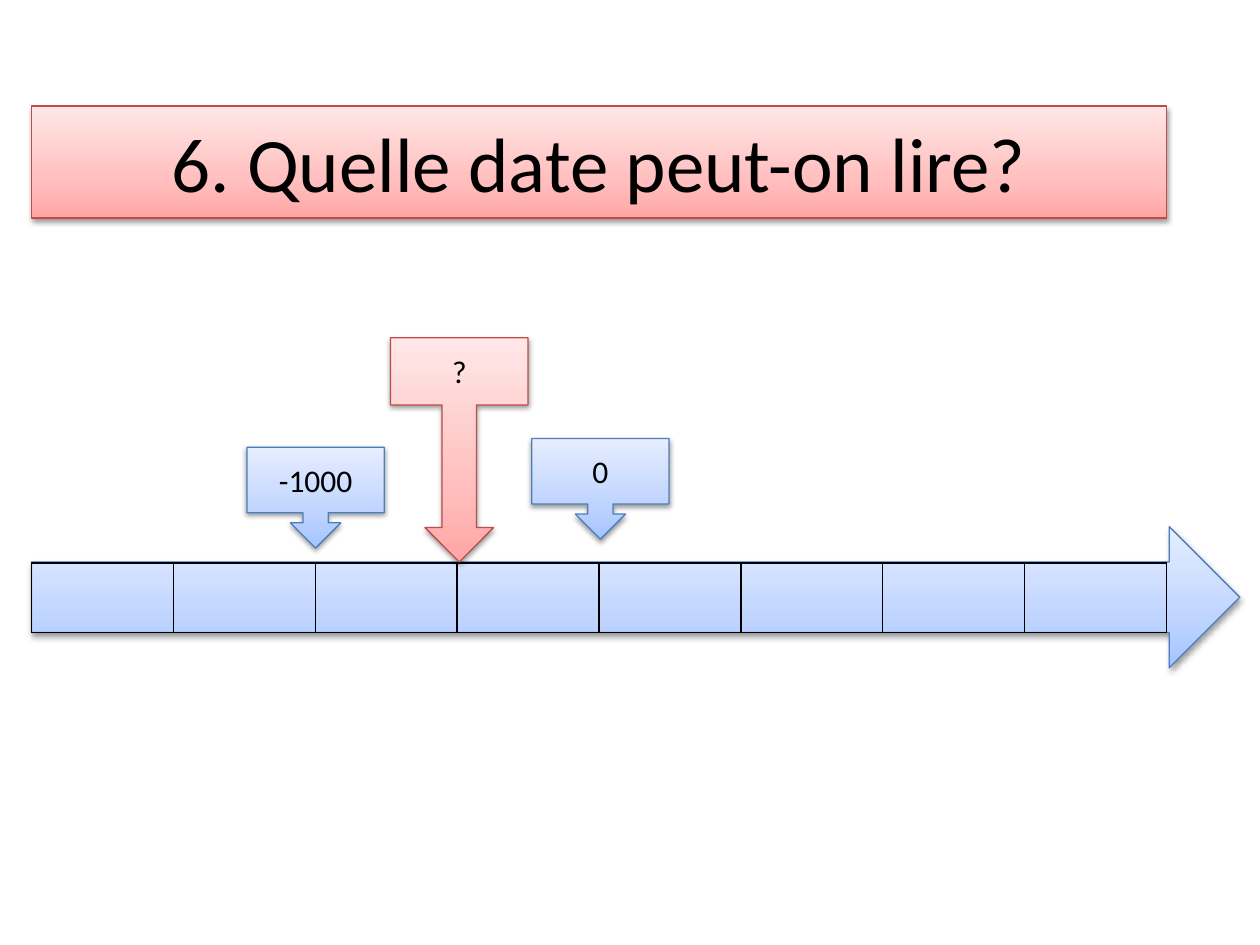
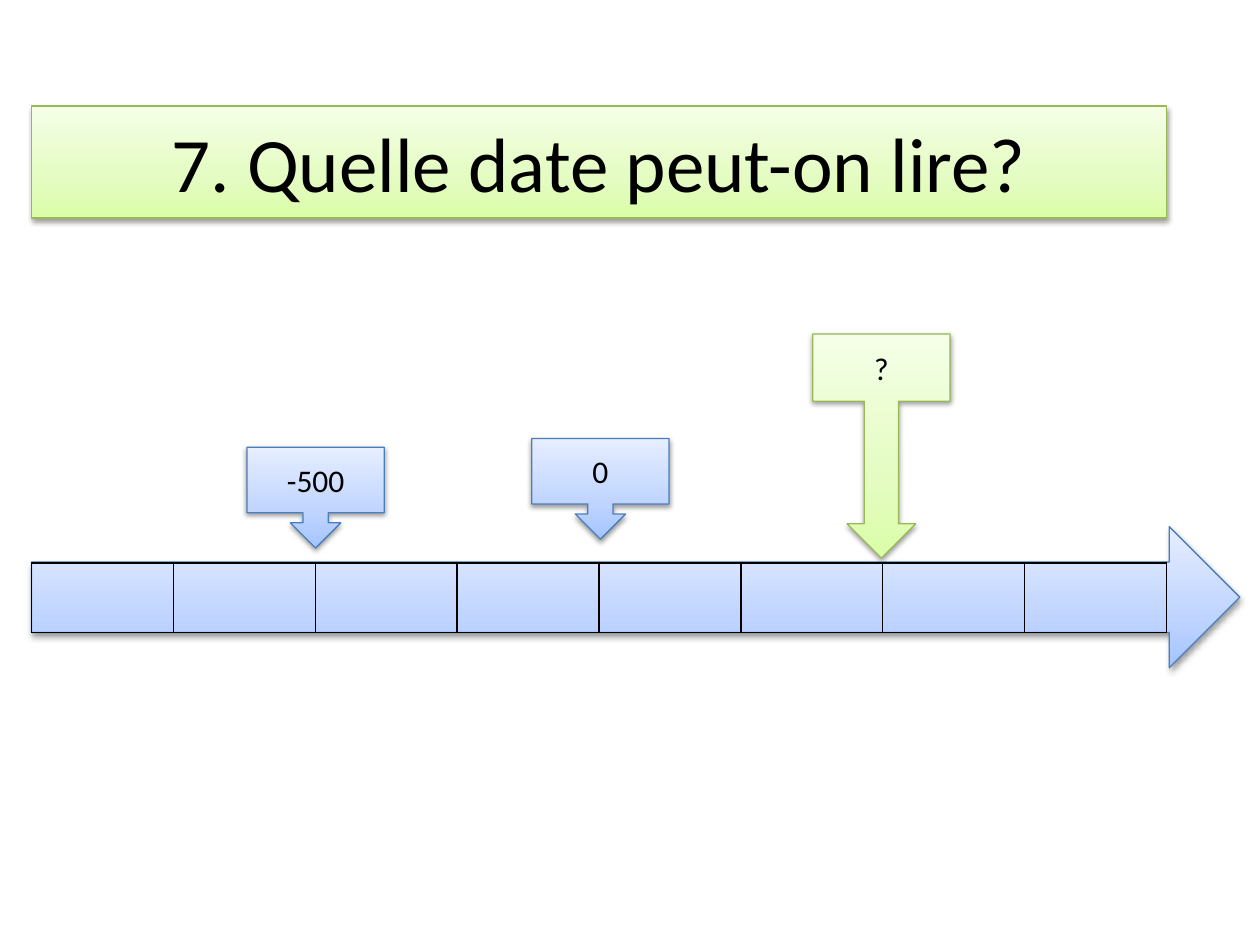
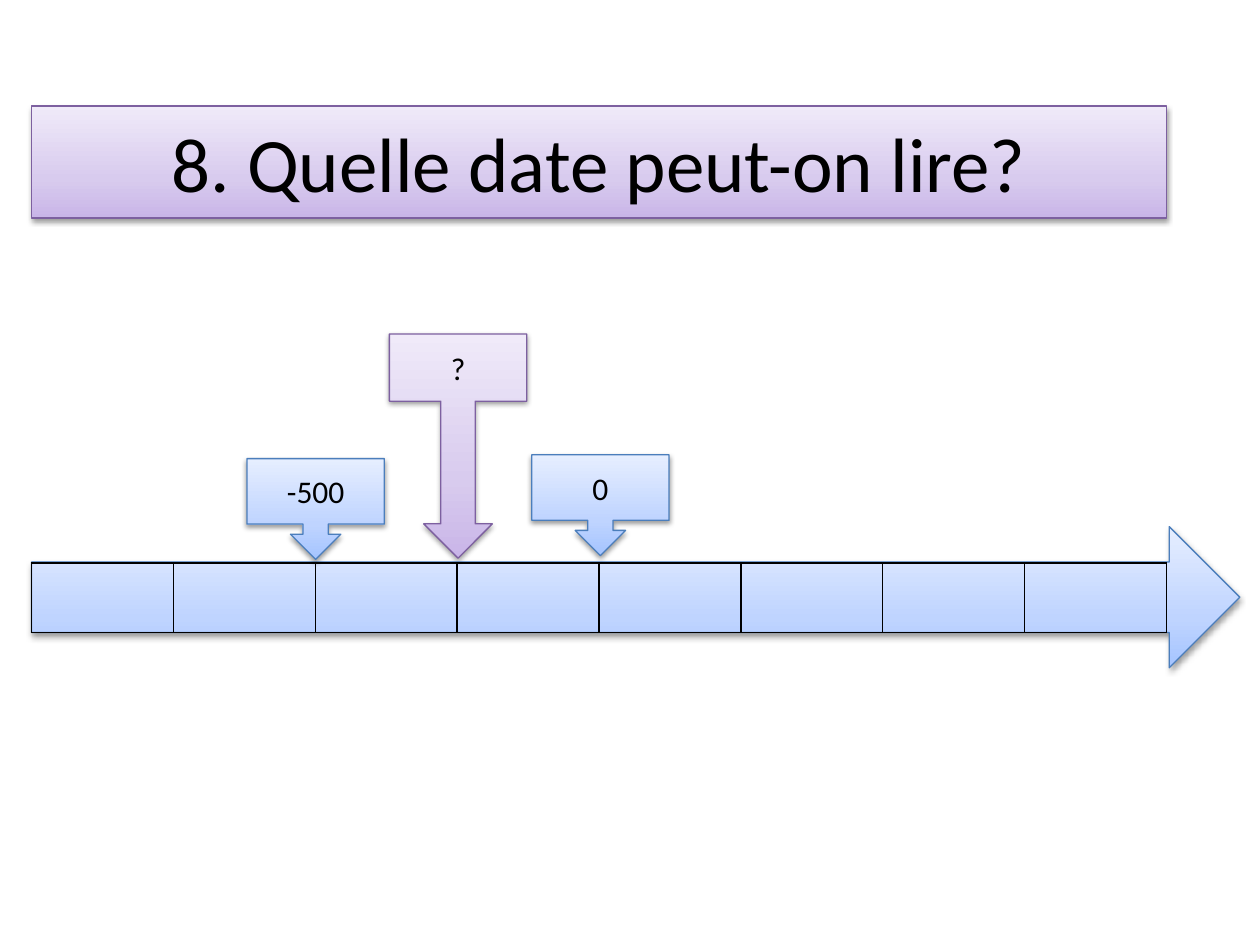
from lxml.etree import SubElement
from pptx import Presentation
from pptx.dml.color import RGBColor
from pptx.enum.shapes import MSO_SHAPE
from pptx.enum.text import MSO_ANCHOR, PP_ALIGN
from pptx.oxml.ns import qn
from pptx.util import Pt

SCALE = 9144
BLACK = "000000"
BLUE = ("A4C4FF", "BFD4FF", "E6EEFF", "4B7EBC")
RED = ("FFA6A5", "FFC0BF", "FFE7E7", "BF4C48")
GREEN = ("DAFDA7", "E4FCC2", "F5FFE7", "98B955")
PURPLE = ("C9B5E8", "D8CBEE", "F0EAF9", "7D60A0")
LEFT, WIDE, CELLS = 25, 901, 8

SLIDES = [
    (6, RED, "-1000", 355, 348, 310, 268),
    (7, GREEN, "-500", 355, 348, 645, 265),
    (8, PURPLE, "-500", 364, 361, 309, 265),
]


def px(size):
    return round(size * SCALE)


def color(code):
    return RGBColor.from_string(code)


def node(parent, tag, **attrs):
    return SubElement(parent, qn(tag), {key: str(val) for key, val in attrs.items()})


class Deck:
    font = "Calibri"
    stops = (0, 35, 100)

    def __init__(self):
        self.prs = Presentation()
        self.prs.slide_width = px(1000)
        self.prs.slide_height = px(750)

    def page(self):
        self.slide = self.prs.slides.add_slide(self.prs.slide_layouts[6])

    def shape(self, kind, box, theme):
        item = self.slide.shapes.add_shape(kind, *map(px, box))
        *tones, edge = theme
        item.fill.gradient()
        item.fill.gradient_angle = 90
        item.line.color.rgb = color(edge)
        item.line.width = Pt(0.75)
        item.shadow.inherit = False
        props = item.element.spPr
        marks = props.find(".//" + qn("a:gsLst"))
        for old in list(marks):
            marks.remove(old)
        for pos, tone in zip(self.stops, tones):
            node(node(marks, "a:gs", pos=pos * 1000), "a:srgbClr", val=tone)
        shade = node(props.find(qn("a:effectLst")), "a:outerShdw", blurRad=Pt(3.1),
                     dist=Pt(1.6), dir=5400000, rotWithShape=0)
        node(node(shade, "a:srgbClr", val=BLACK), "a:alpha", val=38000)
        return item

    def text(self, item, words, size):
        frame = item.text_frame
        frame.word_wrap = True
        frame.vertical_anchor = MSO_ANCHOR.MIDDLE
        para = frame.paragraphs[0]
        para.alignment = PP_ALIGN.CENTER
        run = para.add_run()
        run.text = words
        run.font.name = self.font
        run.font.size = Pt(size)
        run.font.color.rgb = color(BLACK)

    def title(self, words, theme):
        item = self.shape(MSO_SHAPE.RECTANGLE, (LEFT, 84, WIDE, 89), theme)
        self.text(item, words, 44)

    def arrow(self):
        self.shape(MSO_SHAPE.RIGHT_ARROW, (LEFT, 418, 959, 112), BLUE)

    def label(self, words, left, top, theme=BLUE, high=80, share=None):
        item = self.shape(MSO_SHAPE.DOWN_ARROW_CALLOUT, (left, top, 109, high), theme)
        if share:
            item.adjustments[3] = share
        self.text(item, words, 18)

    def scale(self):
        box = map(px, (LEFT, 447, WIDE, 55))
        table = self.slide.shapes.add_table(1, CELLS, *box).table
        table.first_row = table.horz_banding = False
        for col in table.columns:
            col.width = px(WIDE / CELLS)
        for cell in table.iter_cells():
            props = cell._tc.get_or_add_tcPr()
            for side in ("a:lnL", "a:lnR", "a:lnT", "a:lnB"):
                fill = node(node(props, side, w=Pt(1)), "a:solidFill")
                node(fill, "a:srgbClr", val=BLACK)
            cell.fill.background()


def main():
    deck = Deck()
    for num, theme, year, top, zero, left, high in SLIDES:
        deck.page()
        deck.title(f"{num}. Quelle date peut-on lire?", theme)
        deck.arrow()
        deck.label("0", 422, zero)
        deck.scale()
        deck.label(year, 196, top)
        deck.label("?", left, high, theme, 178, 0.3)
    deck.prs.save("out.pptx")


if __name__ == "__main__":
    main()
